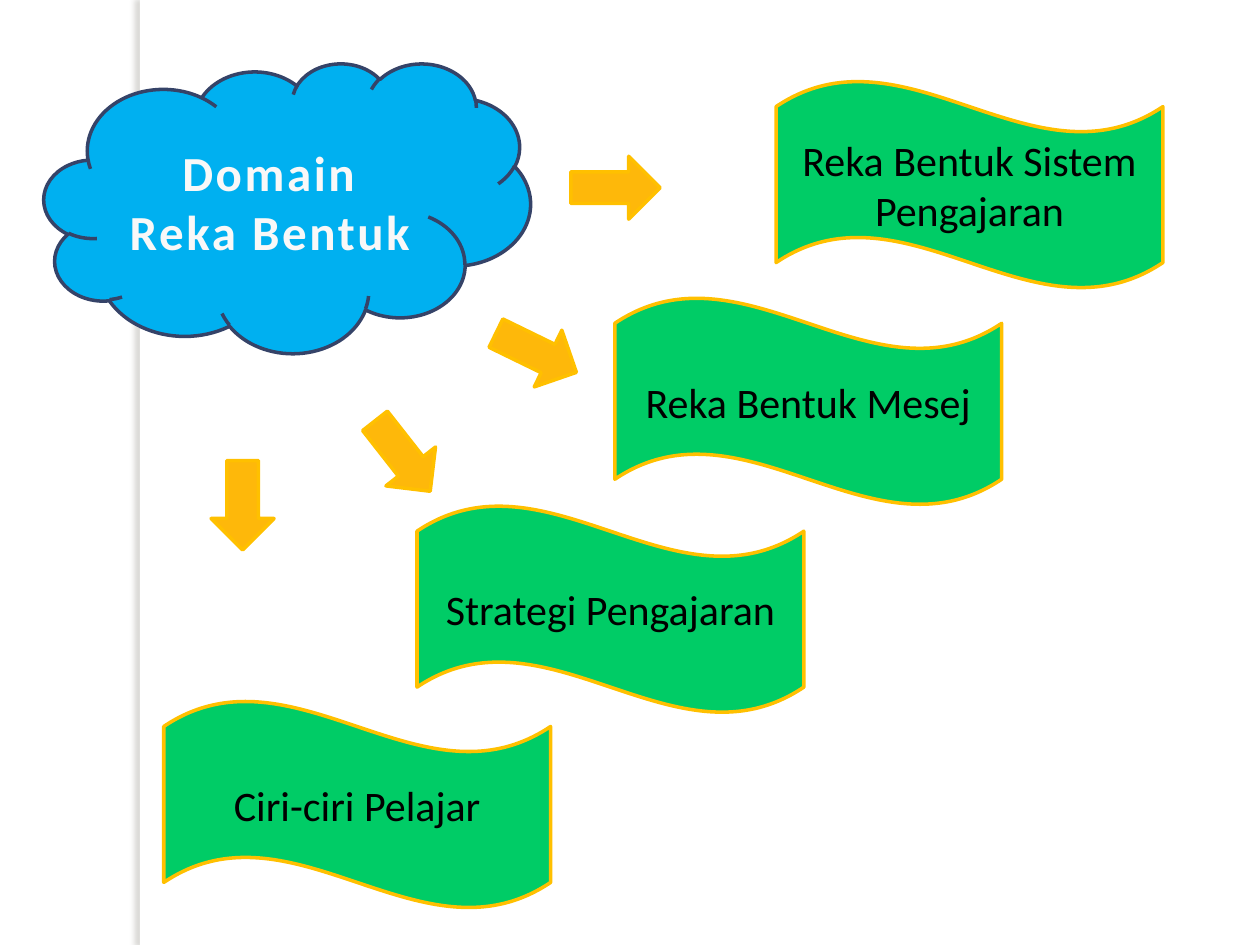
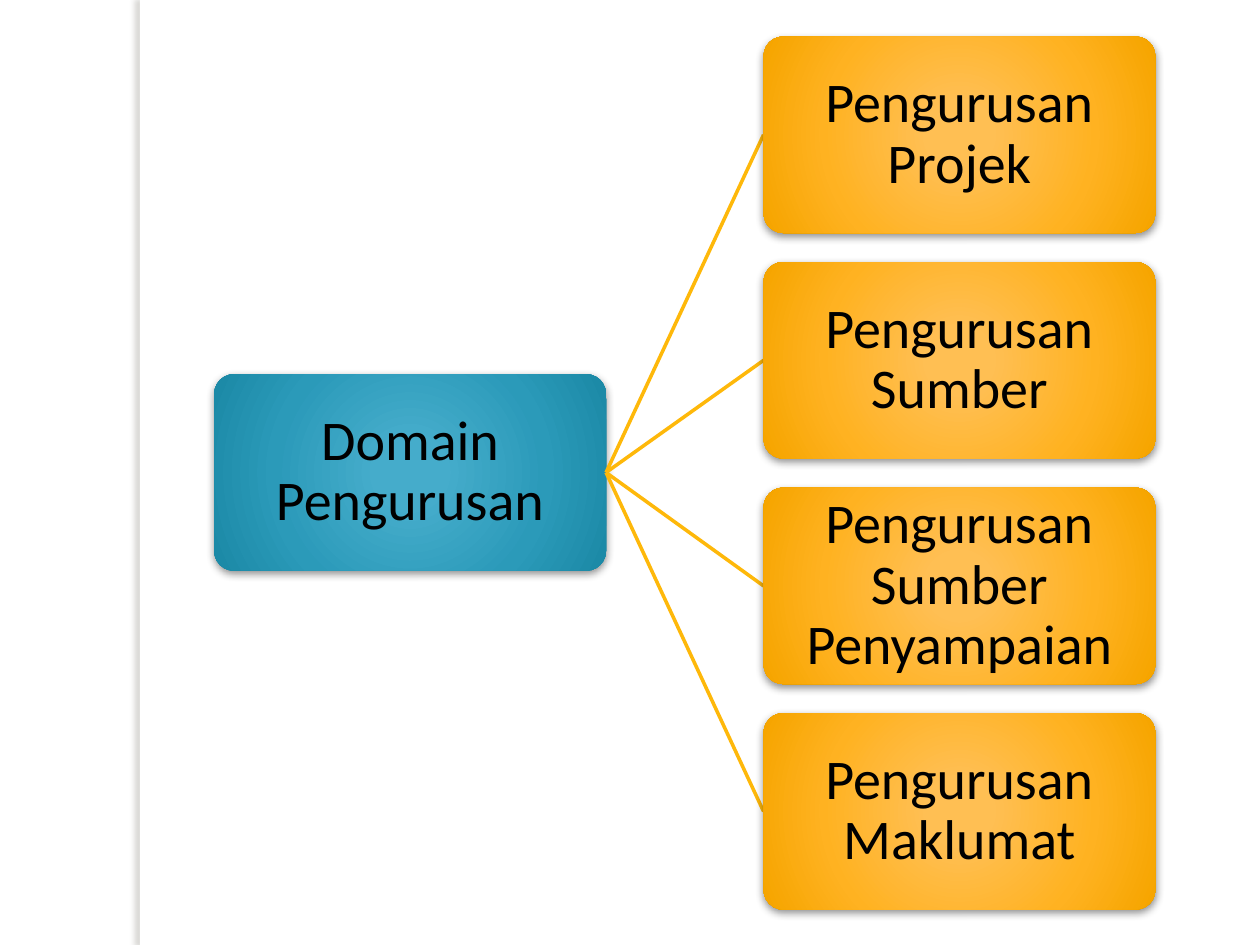
from dataclasses import dataclass

from pptx import Presentation, util as u
from pptx.dml.color import RGBColor
from pptx.enum import shapes, text
from pptx.oxml import parse_xml
from pptx.oxml.ns import nsdecls, qn

WIDTH, HEIGHT = u.Inches(10), u.Inches(7.5)
COLS, ROWS = 100, 75
KIND = shapes.MSO_SHAPE


@dataclass(frozen=True)
class Theme:
    font: str = "Calibri"
    paper: str = "FFFFFF"
    ink: str = "000000"
    strip_shadow: str = "736F63"
    cloud: str = "00B0F0"
    cloud_edge: str = "354368"
    cloud_text: str = "F8F8F8"
    wave: str = "00CC66"
    gold_edge: str = "FFC000"
    gold: str = "FEB80A"
    # gradient stops from the centre outwards, at the positions below
    stops: tuple = (0, 15, 62, 97, 100)
    teal_box: tuple = ("45ACCC", "45ACCB", "2B9AB9", "1C8AA7", "0E89A7")
    amber_box: tuple = ("FFBF54", "FFBF53", "FFB221", "F6A500", "D69900")
    wave_size: int = 24
    cloud_size: int = 28
    box_size: int = 32
    line: int = 2


T = Theme()

WAVES = [
    ("Reka Bentuk Sistem Pengajaran", 61.6, 6.4),
    ("Strategi Pengajaran", 33.1, 40.1),
    ("Reka Bentuk Mesej", 48.8, 23.6),
    ("Ciri-ciri Pelajar", 13, 55.6),
]
ARROWS = [  # column, row, rotation
    (45.3, 12.4, 0),
    (15.7, 37.6, 90),
    (28.4, 33.7, 51.9),
    (39, 25.5, 26),
]
MANAGEMENT = [
    "Pengurusan Projek",
    "Pengurusan Sumber",
    "Pengurusan Sumber Penyampaian",
    "Pengurusan Maklumat",
]
BOX_COLS, BOX_ROWS = 31.1, 15.6
ROOT_COL, CHILD_COL = 17, 60.6
FIRST_ROW, ROW_STEP = 2.9, 17.9


def col(n):
    return round(WIDTH * n / COLS)


def row(n):
    return round(HEIGHT * n / ROWS)


def rgb(value):
    return RGBColor.from_string(value)


def add_block(s, kind, left, top, cols, rows, fill, edge=None):
    """Add a flat preset shape placed on the slide grid."""
    sp = s.shapes.add_shape(kind, col(left), row(top), col(cols), row(rows))
    sp.fill.solid()
    sp.fill.fore_color.rgb = rgb(fill)
    if edge:
        sp.line.color.rgb = rgb(edge)
        sp.line.width = u.Pt(T.line)
    else:
        sp.line.fill.background()
    sp.shadow.inherit = False
    return sp


def cast_shadow(sp, color, alpha, blur, distance, angle):
    sp.element.spPr.find(qn("a:effectLst")).append(parse_xml(
        f'<a:outerShdw {nsdecls("a")} blurRad="{u.Pt(blur)}" dist="{u.Pt(distance)}" '
        f'dir="{angle * 60000}" algn="ctr" rotWithShape="0"><a:srgbClr val="{color}">'
        f'<a:alpha val="{alpha * 1000}"/></a:srgbClr></a:outerShdw>'))


def fill_radial(sp, colors):
    stops = "".join(
        f'<a:gs pos="{pos * 1000}"><a:srgbClr val="{color}"/></a:gs>'
        for pos, color in zip(T.stops, colors))
    radial = parse_xml(
        f'<a:gradFill {nsdecls("a")} rotWithShape="1"><a:gsLst>{stops}</a:gsLst>'
        '<a:path path="circle"><a:fillToRect l="50000" t="50000" r="50000" b="50000"/>'
        '</a:path></a:gradFill>')
    spPr = sp.element.spPr
    spPr.replace(spPr.find(qn("a:solidFill")), radial)


def write(sp, words, size, color=T.ink, bold=False):
    """Write one centred run in a shape and return it."""
    tf = sp.text_frame
    tf.word_wrap = True
    tf.vertical_anchor = text.MSO_ANCHOR.MIDDLE
    p = tf.paragraphs[0]
    p.alignment = text.PP_ALIGN.CENTER
    r = p.add_run()
    r.text = words
    r.font.name = T.font
    r.font.size = u.Pt(size)
    r.font.bold = bold
    r.font.color.rgb = rgb(color)
    return r


def add_box(s, words, left, top, colors):
    sp = add_block(s, KIND.ROUNDED_RECTANGLE, left, top, BOX_COLS, BOX_ROWS, colors[0])
    sp.adjustments[0] = 0.1
    fill_radial(sp, colors)
    cast_shadow(sp, T.ink, 43, 5, 2, 90)
    write(sp, words, T.box_size)
    tf = sp.text_frame
    tf.margin_left = tf.margin_right = tf.margin_top = tf.margin_bottom = u.Inches(0.02)
    tf.paragraphs[0].line_spacing = 0.9


def add_branch(s, x1, y1, x2, y2):
    line = s.shapes.add_connector(
        shapes.MSO_CONNECTOR.STRAIGHT, col(x1), row(y1), col(x2), row(y2))
    line.line.color.rgb = rgb(T.gold)
    line.line.width = u.Pt(T.line)
    line.element.spPr.append(parse_xml(f'<a:effectLst {nsdecls("a")}/>'))


def move_strip_to_layout(s, layout):
    """Build the vertical strip on a slide, then let the layout carry it."""
    strip = add_block(s, KIND.RECTANGLE, 11.1, 0, 0.8, ROWS, T.paper)
    cast_shadow(strip, T.strip_shadow, 25, 3, 3, 180)
    layout.shapes.element.insert(2, strip.element)


def build_design_domain(s):
    cloud = add_block(s, KIND.CLOUD, 3.5, 5, 38.6, 23, T.cloud, T.cloud_edge)
    r = write(cloud, "Domain Reka Bentuk", T.cloud_size, T.cloud_text, bold=True)
    r.font._element.set("spc", "150")
    for words, left, top in WAVES:
        wave = add_block(s, KIND.WAVE, left, top, 30.7, 16.5, T.wave, T.gold_edge)
        write(wave, words, T.wave_size)
    for left, top, angle in ARROWS:
        arrow = add_block(s, KIND.RIGHT_ARROW, left, top, 7.1, 5, T.gold, T.gold_edge)
        arrow.rotation = angle


def build_management_domain(s):
    middle = ROWS / 2
    add_box(s, "Domain Pengurusan", ROOT_COL, middle - BOX_ROWS / 2, T.teal_box)
    for i, words in enumerate(MANAGEMENT):
        top = FIRST_ROW + i * ROW_STEP
        add_branch(s, ROOT_COL + BOX_COLS, middle, CHILD_COL, top + BOX_ROWS / 2)
        add_box(s, words, CHILD_COL, top, T.amber_box)


def main():
    prs = Presentation()
    prs.slide_width, prs.slide_height = WIDTH, HEIGHT
    blank = prs.slide_layouts[6]
    design = prs.slides.add_slide(blank)
    move_strip_to_layout(design, blank)
    build_design_domain(design)
    build_management_domain(prs.slides.add_slide(blank))
    prs.save("out.pptx")


if __name__ == "__main__":
    main()
